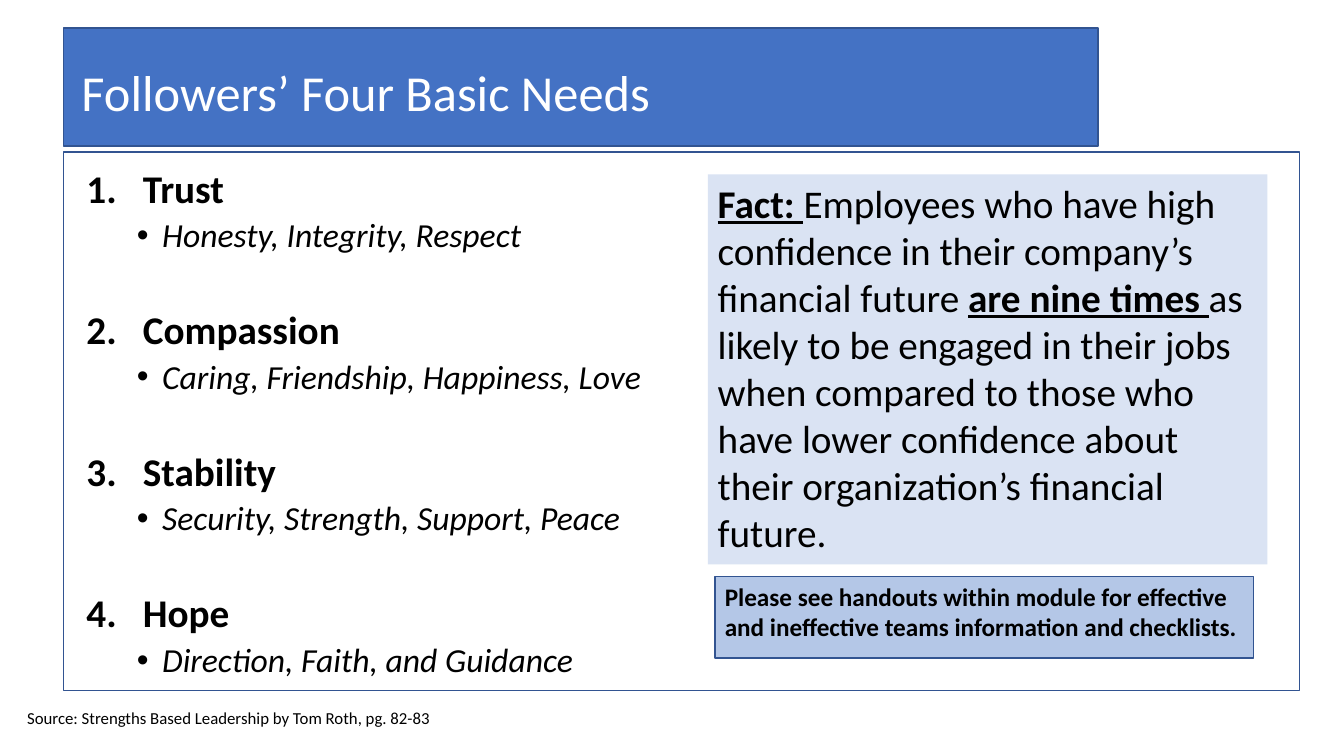
from lxml.etree import SubElement
from pptx import Presentation
from pptx.dml.color import RGBColor
from pptx.enum.shapes import MSO_SHAPE
from pptx.enum.text import MSO_ANCHOR, PP_ALIGN
from pptx.oxml.ns import qn
from pptx.util import Inches, Pt

NEEDS = [
    ("Trust", "Honesty, Integrity, Respect"),
    ("Compassion", "Caring, Friendship, Happiness, Love"),
    ("Stability", "Security, Strength, Support, Peace"),
    ("Hope", "Direction, Faith, and Guidance"),
]
FACT = [
    ("Fact: ", True),
    ("Employees who have high confidence in their company’s financial future ", False),
    ("are nine times ", True),
    ("as likely to be engaged in their jobs when compared to those who have "
     "lower confidence about their organization’s financial future.", False),
]


def color(value):
    return RGBColor.from_string(value)


class SlideBuilder:
    font_name = "Calibri"
    border = "325491"
    ink = "000000"

    def __init__(self, slide):
        self.slide = slide

    def style(self, font, size, ink=None, bold=False, italic=False):
        font.name = self.font_name
        font.size = Pt(size)
        font.color.rgb = color(ink or self.ink)
        font.bold = bold
        font.italic = italic

    def panel(self, left, top, width, height, fill=None, line=None):
        shape = self.slide.shapes.add_shape(
            MSO_SHAPE.RECTANGLE, Inches(left), Inches(top), Inches(width), Inches(height))
        shape.shadow.inherit = False
        if fill:
            shape.fill.solid()
            shape.fill.fore_color.rgb = color(fill)
        else:
            shape.fill.background()
        if line:
            shape.line.color.rgb = color(line)
            shape.line.width = Pt(1)
        else:
            shape.line.fill.background()
        return shape

    def text_box(self, left, top, width, height, anchor=MSO_ANCHOR.TOP):
        shape = self.slide.shapes.add_textbox(
            Inches(left), Inches(top), Inches(width), Inches(height))
        shape.text_frame.word_wrap = True
        shape.text_frame.vertical_anchor = anchor
        return shape.text_frame

    def text(self, left, top, width, height, words, size, ink=None, bold=False,
             anchor=MSO_ANCHOR.TOP):
        text_frame = self.text_box(left, top, width, height, anchor)
        text_frame.text = words
        self.style(text_frame.paragraphs[0].runs[0].font, size, ink, bold)

    def list_item(self, paragraph, words, size, margin, hanging, before,
                  number=None, italic=False):
        paragraph.text = words
        paragraph.line_spacing = 0.9
        paragraph.space_before = Pt(before)
        properties = paragraph._p.get_or_add_pPr()
        properties.set("marL", str(Inches(margin)))
        properties.set("indent", str(-Inches(hanging)))
        if number:
            SubElement(properties, qn("a:buFont"), typeface="+mj-lt")
            SubElement(properties, qn("a:buAutoNum"), type="arabicPeriod", startAt=str(number))
        else:
            SubElement(properties, qn("a:buFont"), typeface="Arial")
            SubElement(properties, qn("a:buChar"), char="•")
        self.style(paragraph.runs[0].font, size, bold=not italic, italic=italic)

    def needs_list(self, left, top, width, height, needs):
        text_frame = self.text_box(left, top, width, height)
        for number, (need, examples) in enumerate(needs, 1):
            first = number == 1
            heading = text_frame.paragraphs[0] if first else text_frame.add_paragraph()
            self.list_item(heading, need, 28, 0.56, 0.56, 0 if first else 40, number)
            detail = text_frame.add_paragraph()
            detail.level = 1
            self.list_item(detail, examples, 24, 0.75, 0.25, 5, italic=True)

    def fact_panel(self, left, top, width, height, fill, parts):
        text_frame = self.panel(left, top, width, height, fill).text_frame
        text_frame.word_wrap = True
        text_frame.vertical_anchor = MSO_ANCHOR.TOP
        paragraph = text_frame.paragraphs[0]
        paragraph.alignment = PP_ALIGN.LEFT
        for words, stressed in parts:
            run = paragraph.add_run()
            run.text = words
            self.style(run.font, 28, bold=stressed)
            run.font.underline = stressed


def main():
    presentation = Presentation()
    presentation.slide_width = Inches(13.33)
    presentation.slide_height = Inches(7.5)
    builder = SlideBuilder(presentation.slides.add_slide(presentation.slide_layouts[6]))

    # Title banner
    builder.panel(0.63, 0.28, 10.26, 1.17, "4472C4", builder.border)
    builder.text(0.71, 0.18, 11.42, 1.45, "Followers’ Four Basic Needs", 36,
                 "FFFFFF", anchor=MSO_ANCHOR.MIDDLE)

    # Framed list of needs
    builder.panel(0.63, 1.51, 12.26, 5.34, line=builder.border)
    builder.needs_list(0.76, 1.63, 6.27, 5.34, NEEDS)

    # Fact and handout note
    builder.fact_panel(7.02, 1.73, 5.55, 3.87, "DAE3F3", FACT)
    builder.panel(7.09, 5.72, 5.34, 0.81, "B4C7E7", builder.border)
    builder.text(7.09, 5.72, 5.34, 0.71,
                 "Please see handouts within module for effective and ineffective "
                 "teams information and checklists.", 18, bold=True)

    # Source line
    builder.text(0.17, 6.97, 7.68, 0.3,
                 "Source: Strengths Based Leadership by Tom Roth, pg. 82-83", 12)

    presentation.save("out.pptx")


if __name__ == "__main__":
    main()
